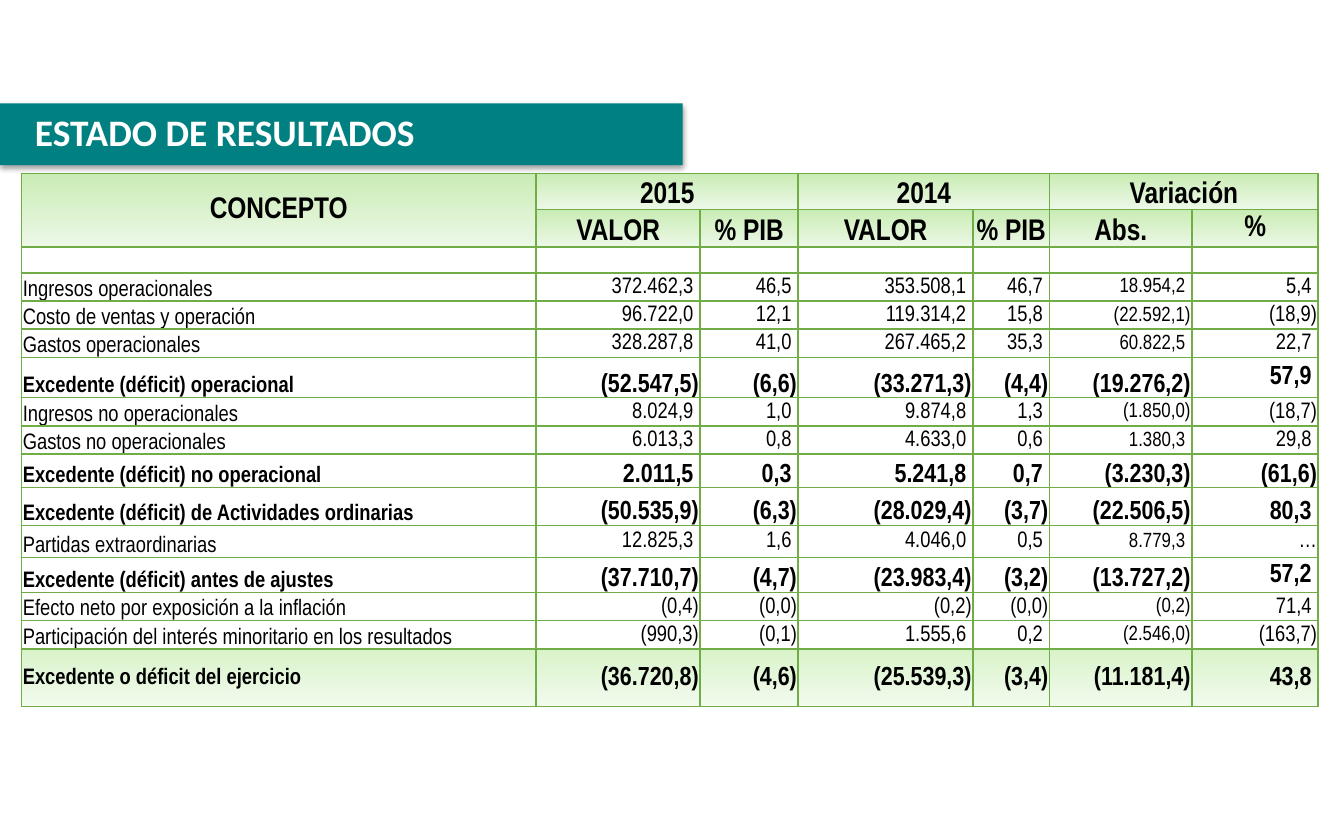
import pptx
import pptx.util
import pptx.dml.color
import pptx.enum.shapes
import pptx.enum.text
from lxml import etree
from pptx.oxml.ns import qn

Inches, Pt = pptx.util.Inches, pptx.util.Pt
ALIGN = pptx.enum.text.PP_ALIGN
ANCHOR = pptx.enum.text.MSO_ANCHOR

# Content
TITLE = "ESTADO DE RESULTADOS"
GROUPS = ["2015", "2014", "Variación"]
SUBHEADS = ["VALOR", "% PIB", "VALOR", "% PIB", "Abs.", "%"]
# kind, row height, label, then the six figures
ROWS = [
    ("line", 0.21, "Ingresos operacionales",
     "372.462,3", "46,5", "353.508,1", "46,7", "18.954,2", "5,4"),
    ("line", 0.21, "Costo de ventas y operación",
     "96.722,0", "12,1", "119.314,2", "15,8", "(22.592,1)", "(18,9)"),
    ("line", 0.21, "Gastos operacionales",
     "328.287,8", "41,0", "267.465,2", "35,3", "60.822,5", "22,7"),
    ("subtotal", 0.3, "Excedente (déficit) operacional",
     "(52.547,5)", "(6,6)", "(33.271,3)", "(4,4)", "(19.276,2)", "57,9"),
    ("line", 0.21, "Ingresos no operacionales",
     "8.024,9", "1,0", "9.874,8", "1,3", "(1.850,0)", "(18,7)"),
    ("line", 0.21, "Gastos no operacionales",
     "6.013,3", "0,8", "4.633,0", "0,6", "1.380,3", "29,8"),
    ("subtotal", 0.25, "Excedente (déficit) no operacional",
     "2.011,5", "0,3", "5.241,8", "0,7", "(3.230,3)", "(61,6)"),
    ("subtotal", 0.28, "Excedente (déficit) de Actividades ordinarias",
     "(50.535,9)", "(6,3)", "(28.029,4)", "(3,7)", "(22.506,5)", "80,3"),
    ("line", 0.24, "Partidas extraordinarias",
     "12.825,3", "1,6", "4.046,0", "0,5", "8.779,3", "…"),
    ("subtotal", 0.26, "Excedente (déficit) antes de ajustes",
     "(37.710,7)", "(4,7)", "(23.983,4)", "(3,2)", "(13.727,2)", "57,2"),
    ("line", 0.21, "Efecto neto por exposición a la inflación",
     "(0,4)", "(0,0)", "(0,2)", "(0,0)", "(0,2)", "71,4"),
    ("line", 0.21, "Participación del interés minoritario en los resultados",
     "(990,3)", "(0,1)", "1.555,6", "0,2", "(2.546,0)", "(163,7)"),
    ("total", 0.43, "Excedente o déficit del ejercicio",
     "(36.720,8)", "(4,6)", "(25.539,3)", "(3,4)", "(11.181,4)", "43,8"),
]
MIDDLE_FIGURES = ("57,9", "57,2")  # subtotals centred vertically
WIDTHS = [3.83, 1.22, 0.73, 1.3, 0.57, 1.06, 0.94]
HEIGHTS = [0.27, 0.28, 0.19] + [row[1] for row in ROWS]
ABS_COLUMN = 5
HEADER_FILL = ("C9ECB4", "EDF8E8")
TOTAL_FILL = ("D9F3C9", "F2FBEE")
WHITE_FILL = ("FFFFFF",)


def rgb(value):
    return pptx.dml.color.RGBColor.from_string(value)


def format_text(frame, font, size, color, bold, align):
    para = frame.paragraphs[0]
    para.alignment = align
    for span in para.runs:
        span.font.name, span.font.size, span.font.bold = font, Pt(size), bold
        span.font.color.rgb = rgb(color)


def paint_cell(cell, colors):
    """Borders first, then one solid colour or a top-to-bottom gradient."""
    properties = cell._tc.get_or_add_tcPr()
    for side in ("a:lnL", "a:lnR", "a:lnT", "a:lnB"):
        line = etree.SubElement(properties, qn(side), w=str(Pt(1)))
        solid = etree.SubElement(line, qn("a:solidFill"))
        etree.SubElement(solid, qn("a:srgbClr"), val="70AD47")
    if len(colors) == 1:
        cell.fill.solid()
        cell.fill.fore_color.rgb = rgb(colors[0])
    else:
        cell.fill.gradient()
        cell.fill.gradient_angle = 270
        for stop, color in zip(cell.fill.gradient_stops, colors):
            stop.color.rgb = rgb(color)


def write_cell(cell, text, size, bold, align, anchor):
    cell.text_frame.text = text
    cell.vertical_anchor = anchor
    if align == ALIGN.RIGHT and text[-1].isdigit():
        cell.margin_right = Inches(0.05)  # digits line up left of the bracket
    format_text(cell.text_frame, "Arial Narrow", size, "000000", bold, align)


deck = pptx.Presentation()
deck.slide_width, deck.slide_height = Inches(10), Inches(6.25)
page = deck.slides.add_slide(deck.slide_layouts[5])

# Title bar, behind the title
bar = page.shapes.add_shape(pptx.enum.shapes.MSO_SHAPE.RECTANGLE,
                            0, Inches(0.77), Inches(5.08), Inches(0.46))
bar.fill.solid()
bar.fill.fore_color.rgb = rgb("008080")
bar.line.fill.background()
effects = etree.SubElement(bar._element.spPr, qn("a:effectLst"))
shadow = etree.SubElement(effects, qn("a:outerShdw"), blurRad=str(Pt(3.1)),
                          dist=str(Pt(1.6)), dir="5400000", rotWithShape="0")
shadow_color = etree.SubElement(shadow, qn("a:srgbClr"), val="000000")
etree.SubElement(shadow_color, qn("a:alpha"), val="38000")
page.shapes._spTree.insert(2, bar._element)

# Title
title = page.shapes.title
title.left, title.top = Inches(0.16), Inches(0.76)
title.width, title.height = Inches(6.02), Inches(1.04)
title.text_frame.text = TITLE
title.text_frame.word_wrap = True
title.text_frame.auto_size = pptx.enum.text.MSO_AUTO_SIZE.NONE
title.text_frame.vertical_anchor = ANCHOR.TOP
format_text(title.text_frame, "Calibri", 20, "FFFFFF", True, ALIGN.LEFT)

# Table grid
table = page.shapes.add_table(len(HEIGHTS), len(WIDTHS), Inches(0.16), Inches(1.29),
                              Inches(sum(WIDTHS)), Inches(sum(HEIGHTS))).table
for column, width in zip(table.columns, WIDTHS):
    column.width = Inches(width)
for row, height in zip(table.rows, HEIGHTS):
    row.height = Inches(height)
for r in range(len(HEIGHTS)):
    fill = HEADER_FILL if r < 2 else TOTAL_FILL if r == len(HEIGHTS) - 1 else WHITE_FILL
    for c in range(len(WIDTHS)):
        cell = table.cell(r, c)
        cell.margin_left = cell.margin_right = cell.margin_top = Inches(0.01)
        cell.margin_bottom = 0
        paint_cell(cell, fill)
        # Small type lets the empty cells stay low
        etree.SubElement(cell.text_frame.paragraphs[0]._p, qn("a:endParaRPr"), sz="1000")

# Header rows
table.cell(0, 0).merge(table.cell(1, 0))
write_cell(table.cell(0, 0), "CONCEPTO", 16, True, ALIGN.CENTER, ANCHOR.MIDDLE)
for i, group in enumerate(GROUPS):
    first = 1 + 2 * i
    table.cell(0, first).merge(table.cell(0, first + 1))
    write_cell(table.cell(0, first), group, 16, True, ALIGN.CENTER, ANCHOR.BOTTOM)
for c, text in enumerate(SUBHEADS, 1):
    anchor = ANCHOR.MIDDLE if text == "%" else ANCHOR.BOTTOM
    write_cell(table.cell(1, c), text, 16, True, ALIGN.CENTER, anchor)

# Body rows
for r, (kind, _, label, *figures) in enumerate(ROWS, 3):
    bold = kind != "line"
    anchor = ANCHOR.MIDDLE if kind == "total" else ANCHOR.BOTTOM
    write_cell(table.cell(r, 0), label, 12, bold, ALIGN.LEFT, anchor)
    for c, figure in enumerate(figures, 1):
        size = 14 if bold else 11 if c == ABS_COLUMN else 12
        raised = kind != "subtotal" or figure in MIDDLE_FIGURES
        write_cell(table.cell(r, c), figure, size, bold, ALIGN.RIGHT,
                   ANCHOR.MIDDLE if raised else ANCHOR.BOTTOM)

deck.save("out.pptx")
